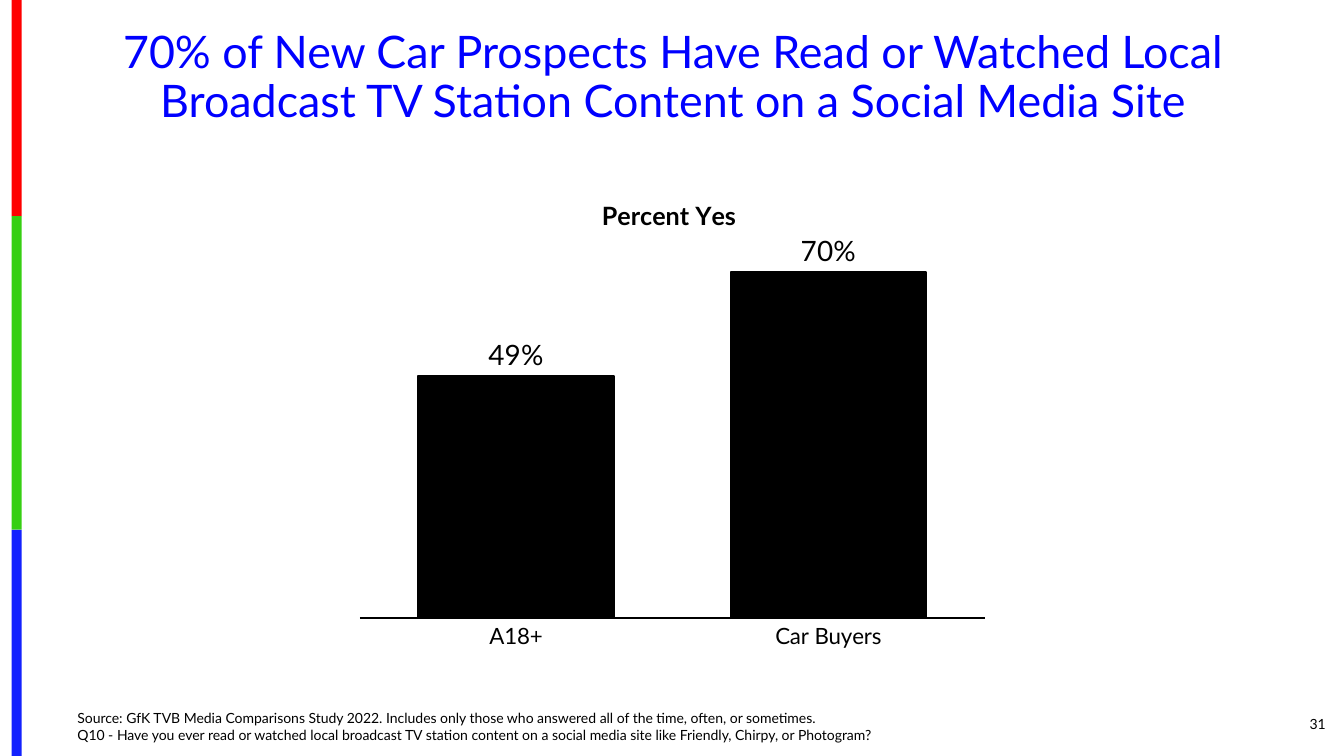
"""Build the slide on local broadcast TV content seen on social media."""
from pptx import Presentation
from pptx.chart.data import CategoryChartData
from pptx.dml.color import RGBColor
from pptx.enum.chart import XL_CHART_TYPE, XL_LABEL_POSITION, XL_TICK_LABEL_POSITION, XL_TICK_MARK
from pptx.enum.shapes import MSO_SHAPE
from pptx.enum.text import MSO_ANCHOR, PP_ALIGN
from pptx.oxml import parse_xml
from pptx.oxml.ns import nsdecls
from pptx.util import Pt

COLUMNS = XL_CHART_TYPE.COLUMN_CLUSTERED
OUTSIDE_END = XL_LABEL_POSITION.OUTSIDE_END
NO_TICK = XL_TICK_MARK.NONE
NO_LABELS = XL_TICK_LABEL_POSITION.NONE
RECTANGLE = MSO_SHAPE.RECTANGLE
TOP, MIDDLE, BOTTOM = MSO_ANCHOR.TOP, MSO_ANCHOR.MIDDLE, MSO_ANCHOR.BOTTOM
LEFT, CENTER, RIGHT = PP_ALIGN.LEFT, PP_ALIGN.CENTER, PP_ALIGN.RIGHT

FONT = "Lato"
BLACK = RGBColor(0x00, 0x00, 0x00)
BLUE = RGBColor(0x00, 0x00, 0xFF)
STRIPES = [
    (RGBColor(0xFE, 0x00, 0x00), 154.4),
    (RGBColor(0x36, 0xCF, 0x12), 224),
    (RGBColor(0x13, 0x22, 0xFE), 161.6),
]

TITLE = ["70% of New Car Prospects Have Read or Watched Local Broadcast TV Station "
         "Content on a Social Media Site"]
SOURCE = [
    "Source: GfK TVB Media Comparisons Study 2022. Includes only those who answered "
    "all of the time, often, or sometimes.",
    "Q10 - Have you ever read or watched local broadcast TV station content on a social "
    "media site like Friendly, Chirpy, or Photogram?",
]
PAGE_NUMBER = ["31"]
CHART_TITLE = "Percent Yes"
SHARES = {"A18+": 0.49, "Car Buyers": 0.7}


def style_font(font, size, color=BLACK, bold=False):
    font.name, font.size, font.bold = FONT, Pt(size), bold
    font.color.rgb = color


def add_text(slide, lines, place, size, color=BLACK, align=LEFT, anchor=TOP, spacing=None):
    box = slide.shapes.add_textbox(*map(Pt, place))
    frame = box.text_frame
    frame.word_wrap = True
    frame.vertical_anchor = anchor
    for index, line in enumerate(lines):
        para = frame.add_paragraph() if index else frame.paragraphs[0]
        para.alignment = align
        para.line_spacing = spacing
        span = para.add_run()
        span.text = line
        style_font(span.font, size, color)


def add_stripes(slide):
    top = 0
    for color, height in STRIPES:
        stripe = slide.shapes.add_shape(RECTANGLE, Pt(8.3), Pt(top), Pt(7.2), Pt(height))
        stripe.shadow.inherit = False
        stripe.fill.solid()
        stripe.fill.fore_color.rgb = color
        stripe.line.fill.background()
        top += height


def manual_layout(inner=False, **edges):
    target = '<c:layoutTarget val="inner"/>' if inner else ""
    modes = '<c:xMode val="edge"/><c:yMode val="edge"/>'
    values = "".join(f'<c:{edge} val="{value}"/>' for edge, value in edges.items())
    return parse_xml(f'<c:layout {nsdecls("c")}><c:manualLayout>{target}{modes}{values}'
                     '</c:manualLayout></c:layout>')


def set_layout(parent, layout, index):
    for old in parent.findall(layout.tag):
        parent.remove(old)
    parent.insert(index, layout)


def add_share_chart(slide):
    data = CategoryChartData(number_format="0%")
    data.categories = list(SHARES)
    data.add_series("Series 1", list(SHARES.values()))
    place = map(Pt, (256.3, 126, 447.8, 388.8))
    chart = slide.shapes.add_chart(COLUMNS, *place, data).chart
    style_font(chart.font, 10)
    chart.has_legend = False

    chart.has_title = True
    title = chart.chart_title
    title.include_in_layout = False
    span = title.text_frame.paragraphs[0].add_run()
    span.text = CHART_TITLE
    style_font(span.font, 18, bold=True)
    set_layout(title._element, manual_layout(x=0.38, y=0.03), 1)

    plot = chart.plots[0]
    plot.gap_width = 60
    plot.vary_by_categories = False
    set_layout(chart._chartSpace.chart.plotArea,
               manual_layout(inner=True, x=0, y=0.085, w=1, h=0.727), 0)

    plot.has_data_labels = True
    labels = plot.data_labels
    labels.show_value = True
    labels.position = OUTSIDE_END
    labels.number_format = "0%"
    labels.number_format_is_linked = False
    style_font(labels.font, 20)

    bars = plot.series[0].format
    bars.fill.solid()
    bars.fill.fore_color.rgb = BLACK
    groups, scale = chart.category_axis, chart.value_axis
    for line in (bars.line, groups.format.line):
        line.color.rgb = BLACK
        line.width = Pt(1.5)

    groups.major_tick_mark = NO_TICK
    style_font(groups.tick_labels.font, 16)
    scale.minimum_scale, scale.maximum_scale = 0, 0.8
    scale.has_major_gridlines = False
    scale.tick_label_position = NO_LABELS
    scale.visible = False


def main():
    deck = Presentation()
    deck.slide_width, deck.slide_height = Pt(960), Pt(540)
    page = deck.slides.add_slide(deck.slide_layouts[6])
    add_stripes(page)
    add_text(page, TITLE, (33.8, 18, 894.2, 77), 32, color=BLUE, align=CENTER, spacing=0.9)
    add_text(page, PAGE_NUMBER, (876.2, 502.6, 77.8, 28.8), 10, align=RIGHT, anchor=MIDDLE)
    add_text(page, SOURCE, (48.2, 502.6, 665.3, 31.7), 10, anchor=BOTTOM)
    add_share_chart(page)
    deck.save("out.pptx")


if __name__ == "__main__":
    main()
